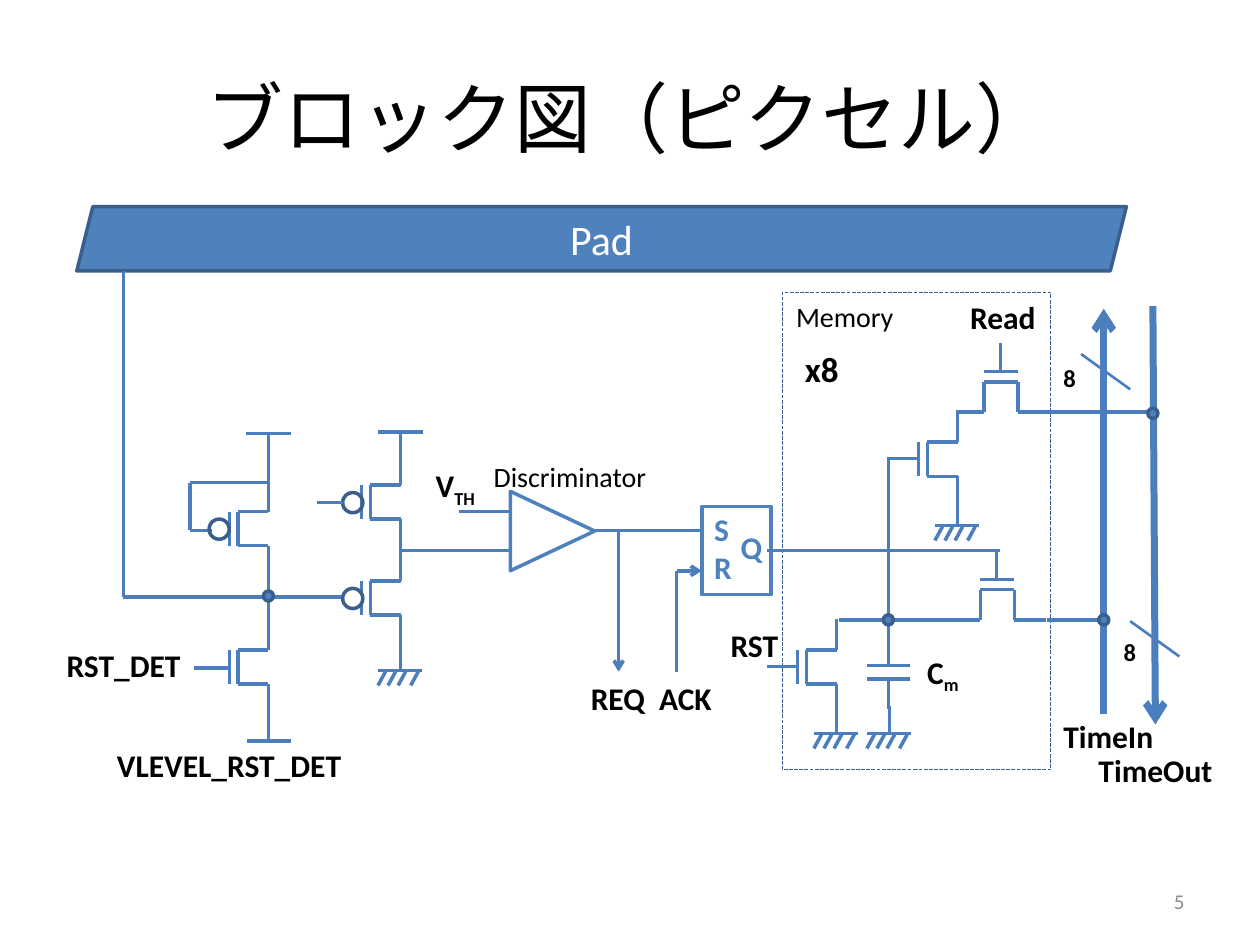
from dataclasses import dataclass
from itertools import pairwise

from lxml import etree
from pptx import Presentation
from pptx.dml.color import RGBColor
from pptx.enum.dml import MSO_LINE
from pptx.enum.shapes import MSO_CONNECTOR, MSO_SHAPE
from pptx.enum.text import MSO_ANCHOR, PP_ALIGN
from pptx.oxml.ns import qn
from pptx.slide import Slide
from pptx.util import Inches, Pt

BLUE = RGBColor(0x4F, 0x81, 0xBD)
WIRE = RGBColor(0x4B, 0x7E, 0xBC)
EDGE = RGBColor(0x3A, 0x5F, 0x8C)
BLACK = RGBColor(0, 0, 0)
WHITE = RGBColor(0xFF, 0xFF, 0xFF)
GRAY = RGBColor(0x8C, 0x8C, 0x8C)
FONT = "Calibri"
STRAIGHT = MSO_CONNECTOR.STRAIGHT
RECT, OVAL = MSO_SHAPE.RECTANGLE, MSO_SHAPE.OVAL
SLANT, WEDGE = MSO_SHAPE.PARALLELOGRAM, MSO_SHAPE.ISOSCELES_TRIANGLE
DASH = MSO_LINE.SQUARE_DOT
LEFT, CENTER, RIGHT = PP_ALIGN.LEFT, PP_ALIGN.CENTER, PP_ALIGN.RIGHT
TOP, MIDDLE = MSO_ANCHOR.TOP, MSO_ANCHOR.MIDDLE


@dataclass
class Pen:
    """Draws on a slide relative to the corner of a box, in inches."""
    slide: Slide
    left: float = 0
    top: float = 0

    def shift(self, x, y):
        """Return a pen whose corner lies at x, y of this one."""
        return Pen(self.slide, self.left + x, self.top + y)

    def spot(self, x, y):
        """Return slide lengths for a point of the box."""
        return Inches(self.left + x), Inches(self.top + y)

    def wire(self, *points, width=2, arrow=False):
        """Join points with straight lines, with an arrowhead at the end if asked."""
        for start, end in pairwise(points):
            line = self.slide.shapes.add_connector(STRAIGHT, *self.spot(*start), *self.spot(*end))
            line.line.color.rgb = WIRE
            line.line.width = Pt(width)
            etree.SubElement(line._element.spPr, qn("a:effectLst"))
        if arrow:
            etree.SubElement(line.line._get_or_add_ln(), qn("a:tailEnd"), type="arrow")

    def shape(self, kind, x, y, w, h, fill=None, edge=EDGE, width=2):
        """Add a preset shape."""
        item = self.slide.shapes.add_shape(kind, *self.spot(x, y), Inches(w), Inches(h))
        item.shadow.inherit = False
        if fill is None:
            item.fill.background()
        else:
            item.fill.solid()
            item.fill.fore_color.rgb = fill
        item.line.color.rgb = edge
        item.line.width = Pt(width)
        return item

    def text(self, words, x, y, w, h=0.4, size=18, color=BLACK, bold=True,
             align=LEFT, anchor=TOP, sub=""):
        """Add a text box, with an optional subscript."""
        box = self.slide.shapes.add_textbox(*self.spot(x, y), Inches(w), Inches(h))
        write(box.text_frame, words, size, color, bold, align, anchor)
        if sub:
            run = box.text_frame.paragraphs[0].add_run()
            run.text = sub
            run._r.get_or_add_rPr().set("baseline", "-25000")

    def dot(self, x, y):
        """Mark a junction centred at x, y."""
        self.shape(OVAL, x - 0.04, y - 0.04, 0.08, 0.08, BLUE)

    def ring(self, x, y, fill=None):
        """Add a gate bubble whose left edge is centred at x, y."""
        self.shape(OVAL, x, y - 0.08, 0.16, 0.16, fill)


def write(frame, words, size, color, bold, align, anchor):
    """Fill a text frame with one paragraph per line of words."""
    frame.word_wrap = True
    frame.vertical_anchor = anchor
    frame.text = words
    for para in frame.paragraphs:
        para.alignment = align
        font = para.font
        font.name, font.size, font.bold = FONT, Pt(size), bold
        font.color.rgb = color


def draw_fet(pen, up=0.44, down=0.44, gate=0):
    """Draw an upright transistor from its upper channel corner."""
    pen.wire((0, -up), (0, 0), (-0.24, 0), (-0.24, 0.27), (0, 0.27), (0, 0.27 + down))
    pen.wire((-0.31, 0), (-0.31, 0.27))
    if gate:
        pen.wire((-0.31, 0.13), (-0.31 - gate, 0.13))


def draw_switch(pen):
    """Draw a lying transistor from its left channel corner."""
    pen.wire((-0.22, 0), (0, 0), (0, -0.24), (0.27, -0.24), (0.27, 0), (0.52, 0))
    pen.wire((0, -0.32), (0.27, -0.32))
    pen.wire((0.13, -0.32), (0.13, -0.55))


def draw_ground(pen):
    """Draw a hatched ground below its stem."""
    pen.wire((0, -0.22), (0, 0))
    pen.wire((-0.18, 0), (0.17, 0))
    for x in (-0.12, -0.04, 0.04, 0.14):
        pen.wire((x, 0.01), (x - 0.06, 0.12))


def draw_pad(pen):
    """Draw the pad bar."""
    pad = pen.shape(SLANT, 0, 0, 8.33, 0.51, BLUE)
    write(pad.text_frame, "Pad", 24, WHITE, False, CENTER, MIDDLE)


def draw_input(pen):
    """Draw the input stage with its reset."""
    pen.wire((0, 0), (0, 2.59), (1.89, 2.59))
    for y in (1.91, 3.01):
        draw_fet(pen.shift(1.15, y))
    pen.wire((0.97, 1.29), (1.33, 1.29))
    pen.wire((1.15, 1.29), (1.15, 1.68), (0.53, 1.68), (0.53, 2.06), (0.7, 2.06))
    pen.ring(0.68, 2.05)
    pen.wire((0.56, 3.15), (0.84, 3.15))
    pen.wire((0.98, 3.73), (1.33, 3.73))
    pen.dot(1.15, 2.58)
    pen.text("RST_DET", -0.55, 2.93, 1.34)
    pen.text("VLEVEL_RST_DET", -0.15, 3.72, 2.06)


def draw_buffer(pen):
    """Draw the two stacked transistors before the discriminator."""
    pen.wire((0.5, 0.03), (0.86, 0.03))
    for y, fill in ((0.45, None), (1.21, WHITE)):
        draw_fet(pen.shift(0.68, y))
        pen.ring(0.22, y + 0.14, fill)
    draw_ground(pen.shift(0.68, 1.92))
    pen.wire((0.02, 0.59), (0.22, 0.59))
    pen.wire((0.69, 0.97), (1.56, 0.97))


def draw_discrim(pen):
    """Draw the discriminator and its threshold."""
    pen.shape(WEDGE, 0.71, 0.28, 0.63, 0.67, edge=BLUE).rotation = 90
    pen.wire((0.28, 0.46), (0.7, 0.46))
    pen.wire((1.36, 0.61), (2.21, 0.61))
    pen.text("V", 0, 0.05, 0.69, sub="TH")
    pen.text("Discriminator", 0.46, 0, 1.5, 0.37, 16, bold=False)


def draw_latch(pen):
    """Draw the latch with its request and acknowledge lines."""
    pen.shape(RECT, 0, 0, 0.55, 0.7, edge=BLUE)
    pen.text("S\nR", 0, -0.02, 0.39, 0.71, color=BLUE)
    pen.text("Q", 0.21, 0.12, 0.39, color=BLUE)
    pen.wire((-0.66, 0.19), (-0.66, 1.31), arrow=True)
    pen.wire((-0.2, 1.31), (-0.2, 0.51), (0, 0.51), arrow=True)
    pen.text("REQ\u00a0 ACK".replace("\u00a0", " "), -0.98, 1.32, 1.19)


def draw_bus(pen):
    """Draw the two time buses."""
    pen.wire((0.42, 3.24), (0.42, 0.02), width=4, arrow=True)
    pen.wire((0.81, 0), (0.83, 3.32), width=4, arrow=True)
    for x, y in ((0, 0.4), (0.48, 2.58)):
        pen.text("8", x, y, 0.39, 0.34, 14)
    for x, y in ((0.24, 0.38), (0.63, 2.5)):
        pen.wire((x, y), (x + 0.39, y + 0.28), width=1.5)
    pen.text("TimeIn", 0, 3.21, 0.98)
    pen.text("TimeOut", 0.28, 3.48, 1.14)


def draw_memory(pen):
    """Draw the memory cell and its links to the buses."""
    frame = pen.shape(RECT, 0, 0, 2.13, 3.79, width=0.75)
    frame.line.dash_style = DASH
    for x, y in ((0.43, 2.84), (1.39, 1.19)):
        draw_fet(pen.shift(x, y), 0.25, 0.22, 0.24)
    for x, y in ((1.6, 0.95), (1.57, 2.6)):
        draw_switch(pen.shift(x, y))
    for x, y in ((0.43, 3.5), (0.85, 3.5), (1.39, 1.85)):
        draw_ground(pen.shift(x, y))
    pen.wire((0.84, 1.31), (0.84, 2.96))
    for y in (2.96, 3.07):
        pen.wire((0.67, y), (1.01, y))
    pen.wire((0.84, 3.07), (0.84, 3.31))
    pen.wire((0.45, 2.6), (1.57, 2.6))
    pen.wire((1.73, 2.05), (-0.12, 2.05))
    pen.wire((2.1, 2.6), (2.57, 2.6))
    pen.wire((1.9, 0.95), (2.93, 0.95))
    for x, y in ((0.84, 2.6), (2.55, 2.6), (2.94, 0.96)):
        pen.dot(x, y)
    pen.text("Read", 1.39, 0, 0.82)
    pen.text("RST", -0.51, 2.6, 0.7)
    pen.text("C", 1.05, 2.81, 0.54, sub="m")
    pen.text("Memory", 0.01, 0.01, 1.15, 0.37, 16, bold=False)
    pen.text("x8", 0.08, 0.39, 0.64, 0.44, 20)


def main():
    """Build the slide and save it."""
    deck = Presentation()
    deck.slide_width, deck.slide_height = Inches(10), Inches(7.5)
    pen = Pen(deck.slides.add_slide(deck.slide_layouts[6]))
    pen.text("ブロック図（ピクセル）", 0.5, 0.3, 9, 1.25, 44, bold=False, align=CENTER, anchor=MIDDLE)
    draw_pad(pen.shift(0.61, 1.64))
    draw_input(pen.shift(0.98, 2.15))
    draw_buffer(pen.shift(2.5, 3.4))
    draw_discrim(pen.shift(3.36, 3.6))
    draw_latch(pen.shift(5.57, 4.02))
    draw_bus(pen.shift(8.34, 2.43))
    draw_memory(pen.shift(6.21, 2.32))
    pen.text("5", 7.17, 6.95, 2.33, 0.4, 12, GRAY, False, RIGHT, MIDDLE)
    deck.save("out.pptx")


if __name__ == "__main__":
    main()
